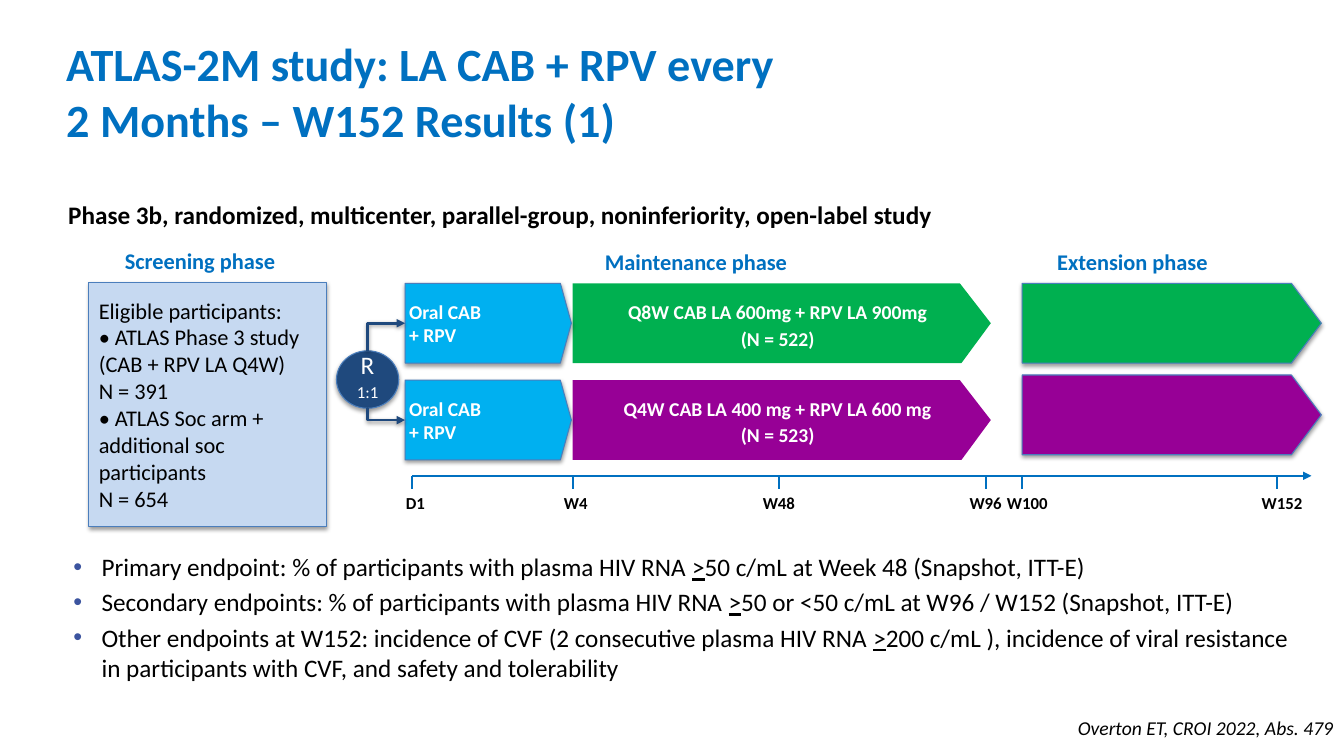
import lxml.etree
import pptx
import pptx.dml.color
import pptx.enum.shapes
import pptx.enum.text
import pptx.oxml.ns
import pptx.util

Cm = pptx.util.Cm
Pt = pptx.util.Pt
Kind = pptx.enum.shapes.MSO_SHAPE
Link = pptx.enum.shapes.MSO_CONNECTOR
Align = pptx.enum.text.PP_ALIGN
Anchor = pptx.enum.text.MSO_ANCHOR
INK = {
    "black": "000000", "white": "FFFFFF", "blue": "0070C0", "edge": "4B7EBC",
    "pale": "C6D9F1", "navy": "1F497D", "sky": "00B0F0", "green": "00B050",
    "plum": "970096", "dot": "3C549F",
}


def tint(name):
    """Return a named colour."""
    return pptx.dml.color.RGBColor.from_string(INK[name])


def node(parent, tag, **attrs):
    """Append a drawing element to a parent."""
    return lxml.etree.SubElement(parent, pptx.oxml.ns.qn("a:" + tag), attrs)


def shade(effects):
    """Put a soft drop shadow in an effect list."""
    drop = node(effects, "outerShdw", blurRad=str(Pt(3.1)), dist=str(Pt(1.6)),
                dir="5400000", rotWithShape="0")
    node(node(drop, "srgbClr", val=INK["black"]), "alpha", val="38000")


def style(par, size, color, bold=False, italic=False, align=Align.LEFT):
    """Set the alignment and font of a paragraph."""
    par.alignment = align
    font = par.font
    font.name, font.size = "Calibri", Pt(size)
    font.bold, font.italic = bold, italic
    font.color.rgb = tint(color)


def fill(frame, text, size, color, gap=None, pads=None, anchor=Anchor.MIDDLE, **look):
    """Write styled paragraphs into a text frame."""
    frame.word_wrap = True
    frame.vertical_anchor = anchor
    if pads:
        (frame.margin_left, frame.margin_top,
         frame.margin_right, frame.margin_bottom) = [Cm(pad) for pad in pads]
    frame.text = text
    for par in frame.paragraphs:
        if gap:
            par.line_spacing = gap
        style(par, size, color, **look)


def label(slide, box, text, size, color="black", wrap=False, anchor=Anchor.TOP, **look):
    """Place a text box."""
    frame = slide.shapes.add_textbox(*map(Cm, box)).text_frame
    fill(frame, text, size, color, anchor=anchor, **look)
    frame.word_wrap = wrap


def block(slide, kind, box, color, adjust=None):
    """Place a filled, outlined shape with a shadow."""
    shape = slide.shapes.add_shape(kind, *map(Cm, box))
    if adjust:
        shape.adjustments[0] = adjust
    shape.fill.solid()
    shape.fill.fore_color.rgb = tint(color)
    shape.line.color.rgb = tint("edge")
    shape.line.width = Pt(0.75)
    shape.shadow.inherit = False
    shade(shape._element.spPr.find(pptx.oxml.ns.qn("a:effectLst")))
    return shape


def stroke(slide, kind, ends, color, width, arrow=False):
    """Draw a connector and return it with its effect list."""
    line = slide.shapes.add_connector(kind, *map(Cm, ends))
    line.line.color.rgb = tint(color)
    line.line.width = Pt(width)
    if arrow:
        node(line.line._get_or_add_ln(), "tailEnd", type="triangle")
    return line, node(line._element.spPr, "effectLst")


def elbow(slide, x, y, right, end):
    """Draw an arrow that runs vertically, then to the right."""
    midx, midy = (x + right) / 2, (y + end) / 2
    half, rise = (right - x) / 2, (y - end) / 2
    ends = (midx + abs(rise), midy + (half if rise > 0 else -half),
            midx - abs(rise), midy - (half if rise > 0 else -half))
    line, effects = stroke(slide, Link.ELBOW, ends, "navy", 2, True)
    shade(effects)
    props = line._element.spPr
    props.find(pptx.oxml.ns.qn("a:prstGeom")).set("prst", "bentConnector2")
    props.find(pptx.oxml.ns.qn("a:xfrm")).set("rot", "5400000" if rise > 0 else "16200000")


def banner(slide, box, color, text):
    """Place a maintenance arrow with centred text."""
    x, y, wide, high = box
    pen = slide.shapes.build_freeform(Cm(x), Cm(y))
    pen.add_line_segments([(Cm(x + wide - 0.78), Cm(y)), (Cm(x + wide), Cm(y + high / 2)),
                           (Cm(x + wide - 0.74), Cm(y + high)), (Cm(x), Cm(y + high))])
    shape = pen.convert_to_shape()
    shape.fill.solid()
    shape.fill.fore_color.rgb = tint(color)
    shape.line.fill.background()
    shape.shadow.inherit = False
    fill(shape.text_frame, text, 14, "white", gap=1.14, pads=(0.1, 0.13, 0.3, 0.13),
         bold=True, align=Align.CENTER)


def header(slide, box):
    """Place the title and the study design line."""
    x, y, wide, high = box
    label(slide, (x, y, 23.39, 3.18), "ATLAS-2M study: LA CAB + RPV every\v"
          "2 Months – W152 Results (1)", 33, "blue", True, Anchor.MIDDLE, bold=True)
    label(slide, (x + 0.05, y + high - 1.02, wide, 1.02), "Phase 3b, randomized, multicenter, "
          "parallel-group, noninferiority, open-label study", 18, wrap=True, bold=True)


def phases(slide, box):
    """Place the phase names above the diagram."""
    x, y, wide, high = box
    for text, mid, drop in (("Screening phase", 2.8, 0), ("Maintenance phase", 15.3, 0.03),
                            ("Extension phase", 26.3, 0.03)):
        label(slide, (x + mid - 2.58, y + drop, 5.16, high), text, 16, "blue",
              bold=True, align=Align.CENTER)


def screen(slide, box):
    """Place the box of eligible participants."""
    shape = block(slide, Kind.RECTANGLE, box, "pale")
    fill(shape.text_frame, "Eligible participants:\v• ATLAS Phase 3 study\n"
         "(CAB + RPV LA Q4W)\vN = 391\n• ATLAS Soc arm +\nadditional soc\n"
         "participants\nN = 654", 16, "black")


def arms(slide, box):
    """Place the randomization circle and both treatment arms."""
    x, y, wide, high = box
    tall = 2.01
    oral, keep, more = x + 1.73, x + 5.95, x + 17.28
    rows = (("green", y, y, "Q8W CAB LA 600mg + RPV LA 900mg\n(N = 522)"),
            ("plum", y + high - tall, y + 2.31, "Q4W CAB LA 400 mg + RPV LA 600 mg\n(N = 523)"))
    for color, top, late, text in rows:
        banner(slide, (keep, top, 10.54, tall), color, text)
        block(slide, Kind.PENTAGON, (more, late, x + wide - more, tall), color, 0.375)
        shape = block(slide, Kind.PENTAGON, (oral, top, 4.19, tall), "sky", 0.138)
        fill(shape.text_frame, "Oral CAB\n+ RPV", 14, "white",
             pads=(0.1, 0.4, 0.1, 0.4), bold=True)
    disc = block(slide, Kind.OVAL, (x, y + 1.7, 1.57, 1.45), "navy")
    fill(disc.text_frame, "R\v1:1", 18, "white", gap=Pt(16), pads=(0, 0, 0, 0),
         align=Align.CENTER)
    disc.text_frame.paragraphs[0].runs[1].font.size = Pt(12)
    for start, (_, top, _, _) in zip((y + 1.7, y + 3.15), rows):
        elbow(slide, x + 0.79, start, oral, top + tall / 2)


def axis(slide, box):
    """Draw the time axis with its ticks and week names."""
    x, y, wide, high = box
    stroke(slide, Link.STRAIGHT, (x, y, x + wide, y), "blue", 1.5, True)
    for text, step, shift in (("D1", 0, 0.08), ("W4", 4.04, 0.08), ("W48", 9.24, 0),
                              ("W96", 14.45, 0), ("W100", 15.37, 0.13), ("W152", 21.79, 0.13)):
        spot = x + step
        stroke(slide, Link.STRAIGHT, (spot, y, spot, y + 0.32), "blue", 1.5)
        label(slide, (spot + shift - 0.52, y + high - 0.51, 1.04, 0.51), text, 12,
              pads=(0, 0, 0, 0), bold=True, align=Align.CENTER)


def goals(slide, box):
    """List the endpoints as bullets."""
    rows = (("Primary endpoint: % of participants with plasma HIV RNA ",
             "50 c/mL at Week 48 (Snapshot, ITT-E)"),
            ("Secondary endpoints: % of participants with plasma HIV RNA ",
             "50 or <50 c/mL at W96 / W152 (Snapshot, ITT-E)"),
            ("Other endpoints at W152: incidence of CVF (2 consecutive plasma HIV RNA ",
             "200 c/mL ), incidence of viral resistance\v"
             "in participants with CVF, and safety and tolerability"))
    frame = slide.shapes.add_textbox(*map(Cm, box)).text_frame
    frame.word_wrap = True
    for rank, (head, tail) in enumerate(rows):
        par = frame.add_paragraph() if rank else frame.paragraphs[0]
        par.text = head
        sign = par.add_run()
        sign.text = ">"
        sign.font.underline = True
        for turn, part in enumerate(tail.split("\v")):
            if turn:
                par.add_line_break()
            par.add_run().text = part
        if rank:
            par.space_before = Pt(3.6)
        props = par._p.get_or_add_pPr()
        props.set("marL", str(Cm(0.71)))
        props.set("indent", str(-Cm(0.71)))
        node(node(props, "buClr"), "srgbClr", val=INK["dot"])
        node(props, "buFont", typeface="Arial")
        node(props, "buChar", char="•")
        style(par, 18, "black")


def main():
    """Build and save the slide."""
    deck = pptx.Presentation()
    deck.slide_width, deck.slide_height = Cm(33.87), Cm(19.05)
    slide = deck.slides.add_slide(deck.slide_layouts[6])
    header(slide, (1.42, 0.71, 28.68, 5.21))
    phases(slide, (2.24, 6.1, 29, 0.94))
    screen(slide, (2.24, 7.11, 5.99, 6.15))
    arms(slide, (8.48, 7.14, 24.82, 4.45))
    axis(slide, (10.39, 11.99, 22.66, 0.94))
    goals(slide, (1.6, 13.77, 32.26, 4.29))
    label(slide, (26.85, 17.91, 7.01, 0.86), "Overton ET, CROI 2022, Abs. 479", 14,
          italic=True, align=Align.RIGHT)
    deck.save("out.pptx")


if __name__ == "__main__":
    main()
